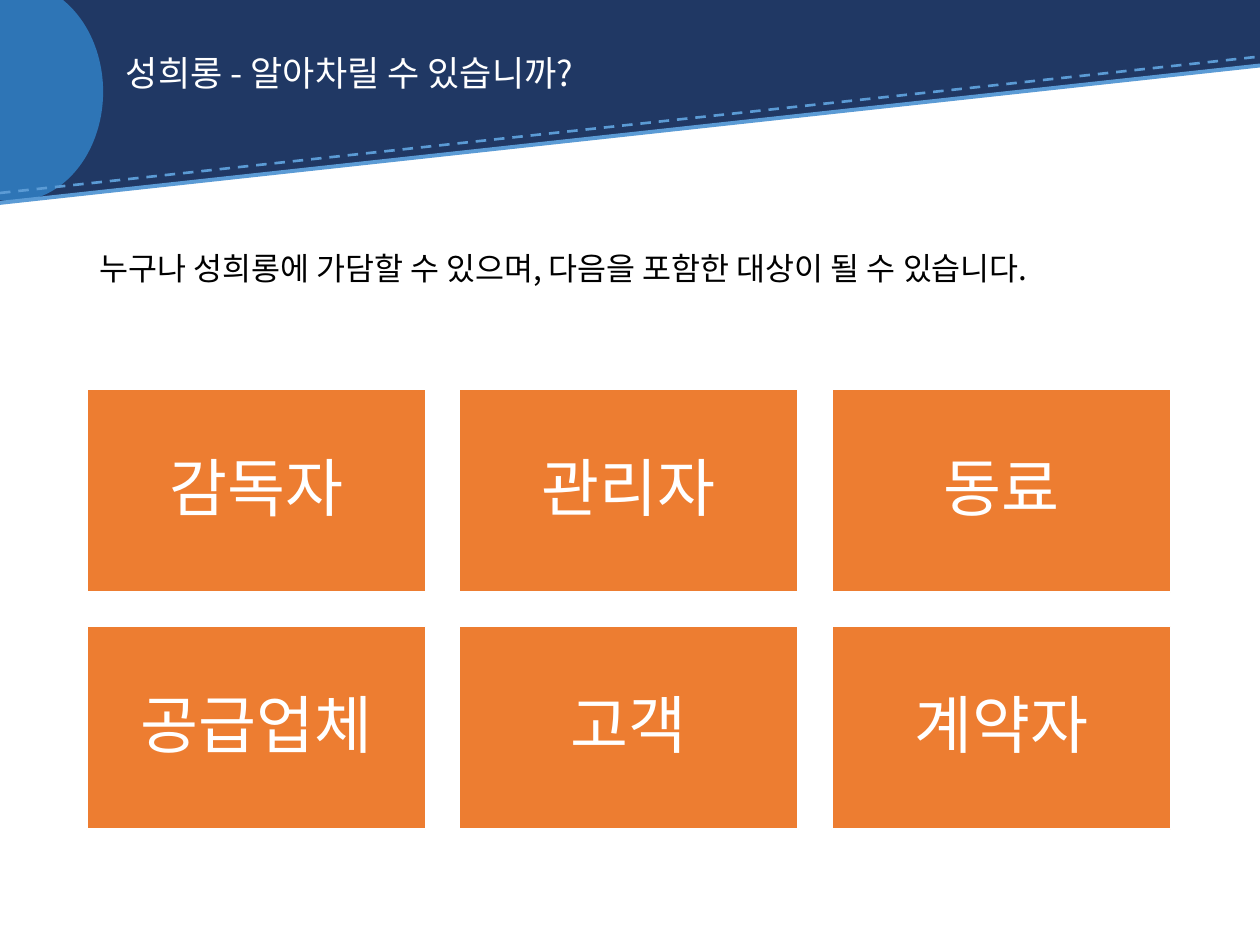
from dataclasses import dataclass
from typing import Any

from lxml import etree
from pptx import Presentation
from pptx import util as u
from pptx.dml.color import RGBColor
from pptx.enum import dml, shapes, text
from pptx.oxml import ns

NAVY, BLUE, SKY = "203864", "2E75B6", "5B9BD5"
ORANGE, WHITE, BLACK = "ED7D31", "FFFFFF", "000000"
TARGETS = [["감독자", "관리자", "동료"], ["공급업체", "고객", "계약자"]]


def color(hex_code):
    return RGBColor.from_string(hex_code)


@dataclass
class Deck:
    """Style and current slide, with one method per kind of element."""

    slide: Any
    font: str = "Noto Sans CJK KR"

    def shape(self, kind, box, fill, line=None):
        item = self.slide.shapes.add_shape(kind, *map(u.Cm, box))
        item.shadow.inherit = False
        item.fill.solid()
        item.fill.fore_color.rgb = color(fill)
        if line:
            item.line.color.rgb = color(line)
            item.line.width = u.Pt(1)
        else:
            item.line.fill.background()
        return item

    def line(self, start, end, width, dash=None):
        edge = self.slide.shapes.add_connector(
            shapes.MSO_CONNECTOR.STRAIGHT, *map(u.Cm, start + end))
        edge.line.color.rgb = color(SKY)
        edge.line.width = u.Pt(width)
        if dash:
            edge.line.dash_style = dash
        etree.SubElement(edge._element.spPr, ns.qn("a:effectLst"))

    def add_words(self, frame, words, size, hex_code, align, spacing=None):
        frame.word_wrap = True
        paragraph = frame.paragraphs[0]
        paragraph.alignment = align
        paragraph.line_spacing = spacing
        run = paragraph.add_run()
        run.text = words
        run.font.size = u.Pt(size)
        run.font.color.rgb = color(hex_code)
        run.font.name = self.font
        etree.SubElement(run.font._element, ns.qn("a:ea"), typeface=self.font)

    def label(self, box, words, size, hex_code, anchor, spacing=None):
        frame = self.slide.shapes.add_textbox(*map(u.Cm, box)).text_frame
        frame.vertical_anchor = anchor
        self.add_words(frame, words, size, hex_code, text.PP_ALIGN.LEFT, spacing)

    def card(self, box, words):
        frame = self.shape(shapes.MSO_SHAPE.RECTANGLE, box, ORANGE, WHITE).text_frame
        frame.vertical_anchor = text.MSO_ANCHOR.MIDDLE
        frame.margin_left = frame.margin_right = u.Cm(0.38)
        frame.margin_top = frame.margin_bottom = u.Cm(0.38)
        self.add_words(frame, words, 36, WHITE, text.PP_ALIGN.CENTER, 0.9)


def main():
    presentation = Presentation()
    presentation.slide_width, presentation.slide_height = u.Cm(25.4), u.Cm(19.05)
    deck = Deck(presentation.slides.add_slide(presentation.slide_layouts[6]))

    deck.shape(shapes.MSO_SHAPE.RECTANGLE, (0, 0, 25.4, 1.32), NAVY)
    wedge = deck.shape(shapes.MSO_SHAPE.RIGHT_TRIANGLE, (0, 1.3, 25.4, 2.77), NAVY)
    wedge._element.spPr.xfrm.set("flipV", "1")
    deck.shape(shapes.MSO_SHAPE.OVAL, (-1.5, -0.36, 3.58, 4.42), BLUE)
    deck.line((0, 3.89), (25.4, 1.14), 1.5, dml.MSO_LINE.DASH)
    deck.line((0, 4.09), (25.4, 1.32), 2.25)

    deck.label((2.29, 0.51, 20.5, 2.03), "성희롱 - 알아차릴 수 있습니까?",
               20, WHITE, text.MSO_ANCHOR.MIDDLE, 0.9)
    for row, names in enumerate(TARGETS):
        for column, name in enumerate(names):
            deck.card((1.75 + 7.51 * column, 7.85 + 4.78 * row, 6.83, 4.09), name)
    deck.label((1.75, 4.9, 23.01, 1.02),
               "누구나 성희롱에 가담할 수 있으며, 다음을 포함한 대상이 될 수 있습니다.",
               18, BLACK, text.MSO_ANCHOR.TOP)

    presentation.save("out.pptx")


if __name__ == "__main__":
    main()
